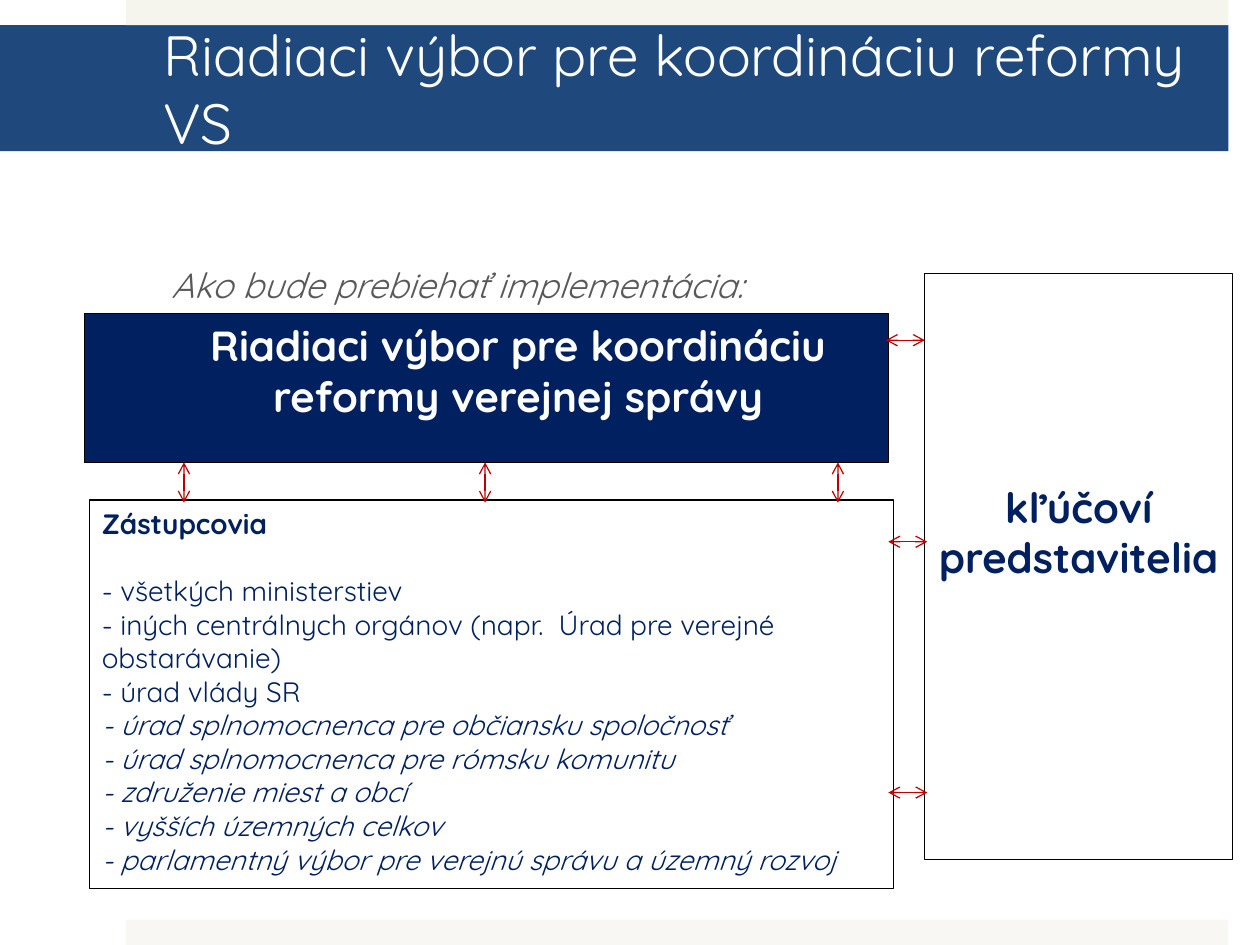
from dataclasses import dataclass

from lxml.etree import SubElement
from pptx import Presentation
from pptx.dml.color import RGBColor
from pptx.enum.shapes import MSO_CONNECTOR as Connector, MSO_SHAPE as Shape
from pptx.enum.text import MSO_ANCHOR as Anchor, MSO_AUTO_SIZE as AutoSize, PP_ALIGN as Align
from pptx.oxml.ns import qn
from pptx.util import Inches, Pt

WIDTH, HEIGHT = Inches(10), Inches(7.5)
FONT = "Quicksand"
NAVY, BLUE, RED, GREY = "002060", "1F497D", "C00000", "595959"
WHITE, BLACK = "FFFFFF", "000000"


@dataclass(frozen=True)
class Area:
    """Percentages of the slide's width and height."""
    left: float
    top: float
    width: float
    height: float

    def lengths(self) -> tuple[int, int, int, int]:
        return (across(self.left), down(self.top), across(self.width), down(self.height))


@dataclass(frozen=True)
class Line:
    text: str
    size: float
    color: str
    bold: bool = False
    italic: bool = False
    align: Align = Align.LEFT
    space_after: float = 0


@dataclass(frozen=True)
class Box:
    area: Area
    fill: str
    lines: tuple[Line, ...] = ()
    outline: str | None = None
    margins: tuple[float, float, float, float] = (0.1, 0.05, 0.1, 0.05)


@dataclass(frozen=True)
class Arrow:
    left: float
    top: float
    right: float
    bottom: float


def across(percent: float) -> int:
    return round(WIDTH * percent / 100)


def down(percent: float) -> int:
    return round(HEIGHT * percent / 100)


def rgb(value: str) -> RGBColor:
    return RGBColor.from_string(value)


def write(shape, lines: tuple[Line, ...], margins, anchor: Anchor = Anchor.TOP) -> None:
    frame = shape.text_frame
    frame.word_wrap = True
    frame.auto_size = AutoSize.NONE
    frame.vertical_anchor = anchor
    frame.margin_left, frame.margin_top, frame.margin_right, frame.margin_bottom = map(Inches, margins)
    frame.text = "\n".join(line.text for line in lines)
    for paragraph, line in zip(frame.paragraphs, lines):
        paragraph.alignment = line.align
        paragraph.space_after = Pt(line.space_after)
        for run in paragraph.runs:
            font = run.font
            font.name, font.size = FONT, Pt(line.size)
            font.bold, font.italic = line.bold, line.italic
            font.color.rgb = rgb(line.color)


def draw_box(slide, box: Box) -> None:
    shape = slide.shapes.add_shape(Shape.RECTANGLE, *box.area.lengths())
    shape.shadow.inherit = False
    shape.fill.solid()
    shape.fill.fore_color.rgb = rgb(box.fill)
    if box.outline:
        shape.line.color.rgb = rgb(box.outline)
        shape.line.width = Pt(0.75)
    else:
        shape.line.fill.background()
    if box.lines:
        write(shape, box.lines, box.margins)


def draw_arrow(slide, arrow: Arrow) -> None:
    connector = slide.shapes.add_connector(
        Connector.STRAIGHT, across(arrow.left), down(arrow.top), across(arrow.right), down(arrow.bottom))
    connector.line.color.rgb = rgb(RED)
    connector.line.width = Pt(0.75)
    outline = connector.line._get_or_add_ln()
    for end in ("a:headEnd", "a:tailEnd"):
        SubElement(outline, qn(end), type="arrow")
    SubElement(connector._element.spPr, qn("a:effectLst"))


def draw_title(slide, area: Area, line: Line) -> None:
    title = slide.shapes.title
    title.left, title.top, title.width, title.height = area.lengths()
    title.fill.solid()
    title.fill.fore_color.rgb = rgb(BLUE)
    write(title, (line,), (1.3, 0.05, 0.3, 0.05), Anchor.MIDDLE)


MEMBERS = (
    "- všetkých ministerstiev",
    "- iných centrálnych orgánov (napr.  Úrad pre verejné obstarávanie)",
    "- úrad vlády SR",
)
ADDED_MEMBERS = (
    "- úrad splnomocnenca pre občiansku spoločnosť",
    "- úrad splnomocnenca pre rómsku komunitu",
    "- združenie miest a obcí",
    "- vyšších územných celkov",
    "- parlamentný výbor pre verejnú správu a územný rozvoj",
)
REPRESENTATIVES = (
    Line("Zástupcovia", 16, NAVY, bold=True, space_after=19.2),
    *(Line(member, 16, NAVY) for member in MEMBERS),
    *(Line(member, 16, NAVY, italic=True) for member in ADDED_MEMBERS),
)
COMMITTEE = Line("Riadiaci výbor pre koordináciu reformy verejnej správy", 24, WHITE, bold=True, align=Align.CENTER)
LEADERS = Line("kľúčoví predstavitelia", 24, NAVY, bold=True, align=Align.CENTER)

BOXES = (
    Box(Area(10, 0, 87.5, 2.67), "F5F4ED"),
    Box(Area(10, 97.33, 87.5, 2.67), "F8F7F3"),
    Box(Area(6.7, 33.2, 63.8, 15.73), NAVY, (COMMITTEE,), BLACK, (0.6, 0.05, 0.1, 0.05)),
    Box(Area(7.1, 52.93, 63.8, 41.07), WHITE, REPRESENTATIVES, BLACK),
    Box(Area(73.4, 28.93, 24.4, 62), WHITE, (LEADERS,), BLACK, (0.1, 1.65, 0.1, 0.05)),
)
ARROWS = (
    *(Arrow(column, 48.93, column, 53.2) for column in (14.6, 38.5, 66.5)),
    *(Arrow(70.5, row, 73.6, row) for row in (57.33, 83.87)),
    Arrow(70.3, 36, 73.4, 36),
)


def main() -> None:
    presentation = Presentation()
    presentation.slide_width, presentation.slide_height = WIDTH, HEIGHT
    slide = presentation.slides.add_slide(presentation.slide_layouts.get_by_name("Title Only"))
    draw_title(slide, Area(0, 2.67, 97.5, 13.33),
               Line("Riadiaci výbor pre koordináciu reformy VS", 32.4, WHITE))
    heading = slide.shapes.add_textbox(*Area(13.6, 27.87, 58, 5).lengths())
    write(heading, (Line("Ako bude prebiehať implementácia:", 20, GREY, italic=True),), (0, 0, 0, 0))
    for box in BOXES:
        draw_box(slide, box)
    for arrow in ARROWS:
        draw_arrow(slide, arrow)
    presentation.save("out.pptx")


if __name__ == "__main__":
    main()
